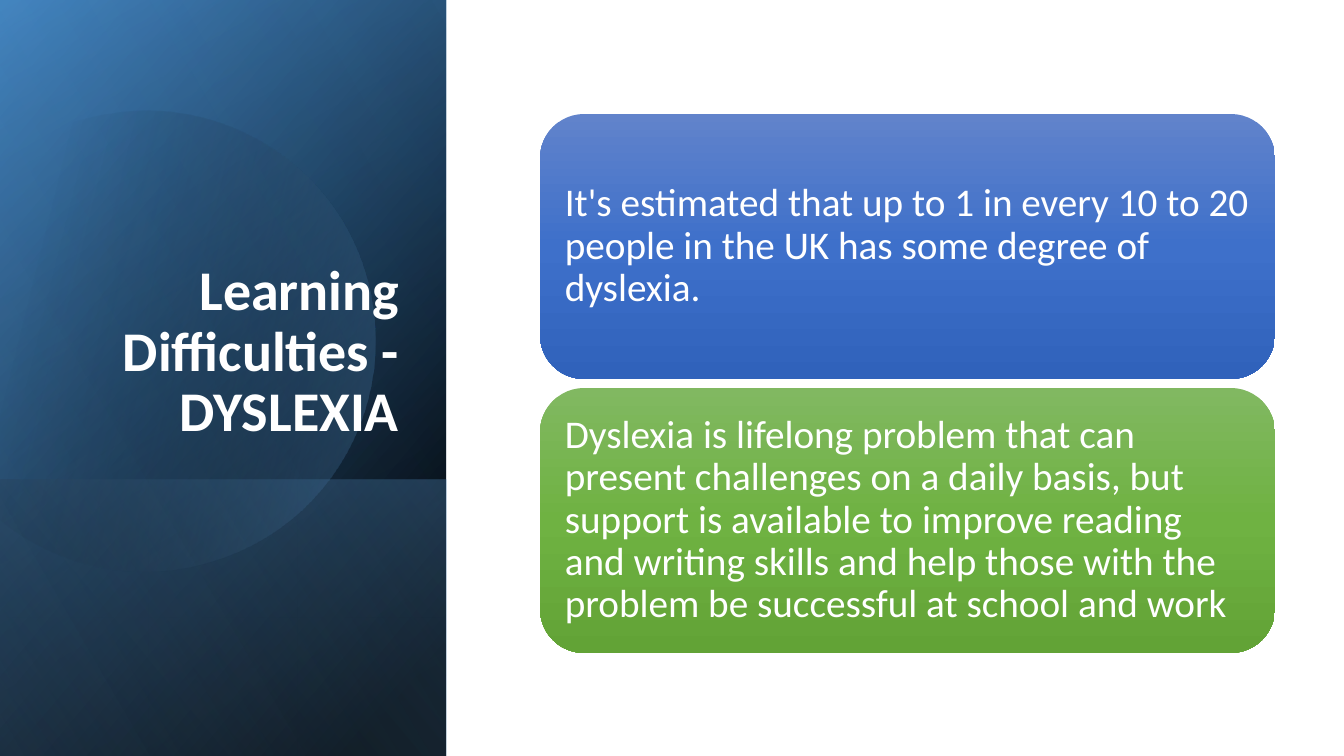
"""Build the slide on dyslexia with a gradient side panel and two text cards."""
import math

import pptx
import pptx.dml.color
import pptx.enum.shapes
import pptx.enum.text
import pptx.oxml
import pptx.oxml.ns
import pptx.util

EMU_PER_PX = 914400 / 100.8
SLIDE_WIDTH, SLIDE_HEIGHT, PANEL_WIDTH = 1344, 756, 446

THEME = {
    "font": "Calibri",
    "text": pptx.dml.color.RGBColor.from_string("FFFFFF"),
    "title_size": pptx.util.Pt(40),
    "body_size": pptx.util.Pt(28),
    "base": (50, [(8, "000000", 100), (100, "2E75B6", 100)]),
    "glow": (30, [(0, "000000", 0), (99, "5B9BD5", 46)]),
    "foot": (130, [(2, "5B9BD5", 29), (100, "000000", 30)]),
    "disc": (30, [(29, "000000", 0), (100, "5B9BD5", 43)]),
    "veil": (120, [(0, "000000", 0), (99, "9DC3E6", 11)]),
    "blue": (90, [(0, "6183CB", 100), (50, "3E70CA", 100), (100, "3062BB", 100)]),
    "green": (90, [(0, "81B861", 100), (50, "6FB242", 100), (100, "62A336", 100)]),
}

PANEL_LAYERS = [("base", 756), ("glow", 756), ("foot", 276), ("disc", None), ("veil", 756)]

DISC_ROTATION = 343.9
DISC_CENTRE = (160, 337)
DISC_START = (0, 162)
DISC_CURVES = [
    [(23, 143), (50, 129), (81, 120)],
    [(104, 114), (127, 111), (150, 111)],
    [(248, 113), (338, 178), (366, 277)],
    [(401, 400), (331, 527), (209, 562)],
    [(132, 585), (53, 565), (-3, 518)],
]
DISC_CUT = [(-15, 507), (-15, 176)]
CURVE_STEPS = 24

CARDS = [
    ("blue", "It's estimated that up to 1 in every 10 to 20 people in the UK has some degree of dyslexia."),
    ("green", "Dyslexia is lifelong problem that can present challenges on a daily basis, "
              "but support is available to improve reading and writing skills and help those "
              "with the problem be successful at school and work"),
]
CARD_LEFT, CARD_TOP, CARD_WIDTH, CARD_HEIGHT, CARD_GAP = 540, 114, 735, 265, 9


def px(*lengths):
    """Turn pixel lengths into a list of EMU lengths."""
    return [pptx.util.Emu(round(length * EMU_PER_PX)) for length in lengths]


def paint(shape, gradient):
    """Give a shape a linear gradient without line or shadow."""
    angle, stops = gradient
    shape.shadow.inherit = False
    shape.line.fill.background()
    shape.fill.background()
    stop_xml = "".join(
        f'<a:gs pos="{position * 1000}"><a:srgbClr val="{color}">'
        f'<a:alpha val="{opacity * 1000}"/></a:srgbClr></a:gs>'
        for position, color, opacity in stops
    )
    properties = shape.element.spPr
    properties.replace(
        properties.find(pptx.oxml.ns.qn("a:noFill")),
        pptx.oxml.parse_xml(
            f'<a:gradFill {pptx.oxml.ns.nsdecls("a")} rotWithShape="1">'
            f'<a:gsLst>{stop_xml}</a:gsLst><a:lin ang="{angle * 60000}" scaled="0"/></a:gradFill>'
        ),
    )


presentation = pptx.Presentation()
presentation.slide_width, presentation.slide_height = px(SLIDE_WIDTH, SLIDE_HEIGHT)
slide = presentation.slides.add_slide(presentation.slide_layouts[5])

disc_outline = [DISC_START]
for first, second, end in DISC_CURVES:
    start = disc_outline[-1]
    for step in range(1, CURVE_STEPS + 1):
        t = step / CURVE_STEPS
        weights = ((1 - t) ** 3, 3 * t * (1 - t) ** 2, 3 * t * t * (1 - t), t ** 3)
        disc_outline.append(tuple(
            sum(weight * value for weight, value in zip(weights, values))
            for values in zip(start, first, second, end)
        ))
disc_outline += DISC_CUT

turn = math.radians(-DISC_ROTATION)
centre_x, centre_y = DISC_CENTRE
disc_points = []
for x, y in disc_outline:
    across, down = x - centre_x, y - centre_y
    disc_points.append(px(
        centre_x + across * math.cos(turn) - down * math.sin(turn),
        centre_y + across * math.sin(turn) + down * math.cos(turn),
    ))

for layer, height in PANEL_LAYERS:
    if layer == "disc":
        builder = slide.shapes.build_freeform(*disc_points[0], scale=1.0)
        builder.add_line_segments(disc_points[1:], close=True)
        shape = builder.convert_to_shape()
        shape.rotation = DISC_ROTATION
    else:
        left = (PANEL_WIDTH - height) // 2
        top = SLIDE_HEIGHT - (height + PANEL_WIDTH) // 2
        shape = slide.shapes.add_shape(
            pptx.enum.shapes.MSO_SHAPE.RECTANGLE, *px(left, top, height, PANEL_WIDTH))
        shape.rotation = 90
        shape.element.spPr.xfrm.set("flipH", "1")
    paint(shape, THEME[layer])

title = slide.shapes.title
title.left, title.top, title.width, title.height = px(65, 185, 344, 264)
title.text_frame.text = "Learning Difficulties - DYSLEXIA"
slide.shapes.element.append(title.element)

text_blocks = [(title, {
    "anchor": pptx.enum.text.MSO_ANCHOR.BOTTOM,
    "alignment": pptx.enum.text.PP_ALIGN.RIGHT,
    "size": THEME["title_size"], "bold": True, "inset": 10,
})]
for index, (color, text) in enumerate(CARDS):
    card_top = CARD_TOP + index * (CARD_HEIGHT + CARD_GAP)
    card = slide.shapes.add_shape(
        pptx.enum.shapes.MSO_SHAPE.ROUNDED_RECTANGLE,
        *px(CARD_LEFT, card_top, CARD_WIDTH, CARD_HEIGHT))
    paint(card, THEME[color])
    card.text_frame.text = text
    text_blocks.append((card, {
        "anchor": pptx.enum.text.MSO_ANCHOR.MIDDLE,
        "alignment": pptx.enum.text.PP_ALIGN.LEFT,
        "size": THEME["body_size"], "bold": False, "inset": 12,
    }))

for shape, style in text_blocks:
    frame = shape.text_frame
    inset, = px(style["inset"])
    frame_format = {
        "word_wrap": True, "auto_size": pptx.enum.text.MSO_AUTO_SIZE.NONE,
        "vertical_anchor": style["anchor"], "margin_left": inset, "margin_right": inset,
    }
    for name, value in frame_format.items():
        setattr(frame, name, value)
    paragraph = frame.paragraphs[0]
    paragraph.alignment = style["alignment"]
    paragraph.line_spacing = 0.9
    font = paragraph.runs[0].font
    for name, value in {"name": THEME["font"], "size": style["size"], "bold": style["bold"]}.items():
        setattr(font, name, value)
    font.color.rgb = THEME["text"]

presentation.save("out.pptx")
